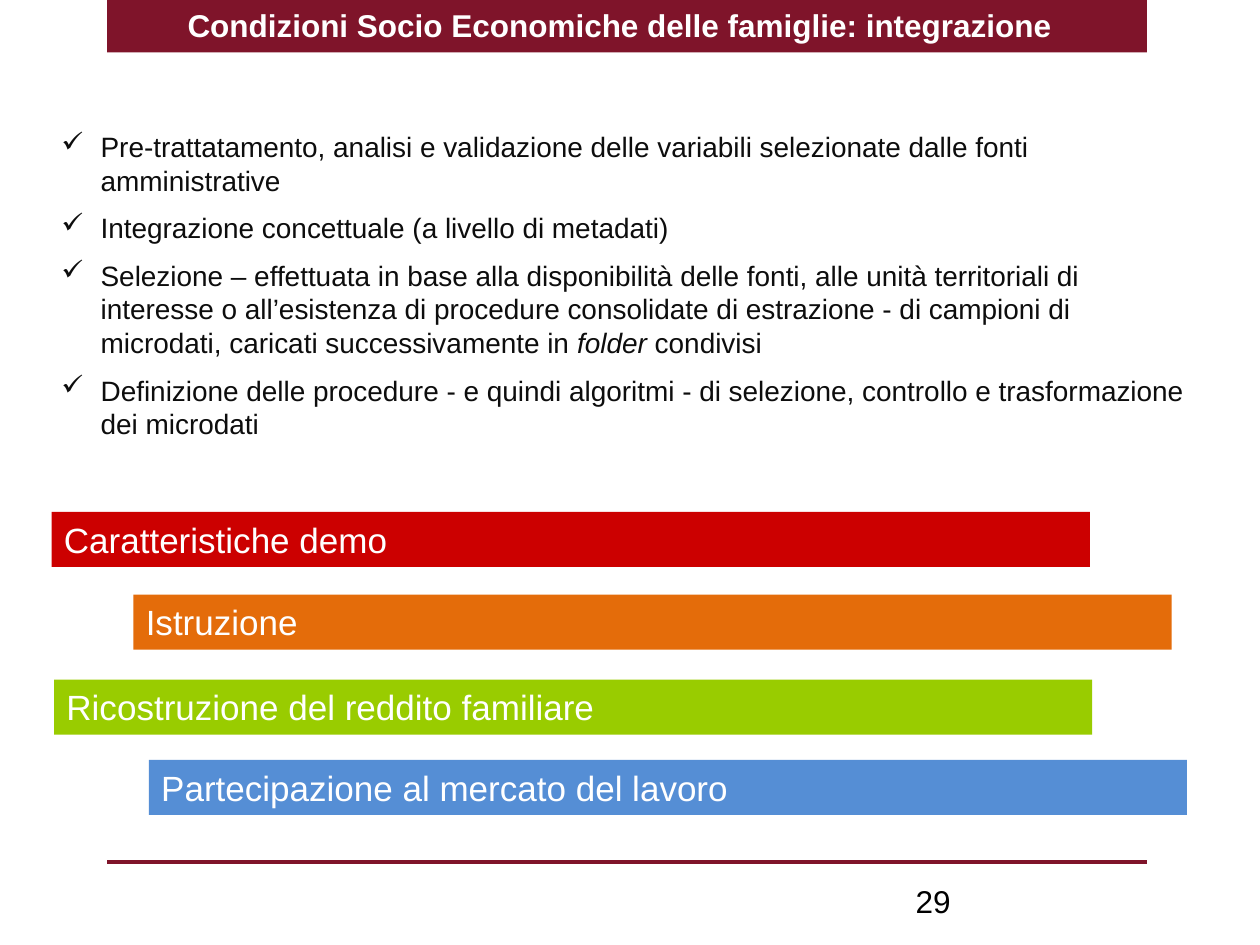
from lxml import etree
from pptx import Presentation
from pptx import util as u
from pptx.dml.color import RGBColor
from pptx.enum import shapes, text
from pptx.oxml.ns import qn

FONT = "Arial"
COLORS = {
    "maroon": "7F142A", "red": "CC0000", "orange": "E46C0A", "green": "99CC00",
    "blue": "558ED5", "white": "FFFFFF", "ink": "0D0D0D", "black": "000000",
}
TITLE = "Condizioni Socio Economiche delle famiglie: integrazione"
STEPS = [
    ["Pre-trattatamento, analisi e validazione delle variabili selezionate dalle fonti amministrative"],
    ["Integrazione concettuale (a livello di metadati)"],
    ["Selezione – effettuata in base alla disponibilità delle fonti, alle unità territoriali di "
     "interesse o all’esistenza di procedure consolidate di estrazione - di campioni di microdati, "
     "caricati successivamente in ", "folder", " condivisi"],
    ["Definizione delle procedure - e quindi algoritmi - di selezione, controllo e trasformazione dei microdati"],
]
TOPICS = [
    ("Caratteristiche demo", "red", 1.04, 10.32),
    ("Istruzione", "orange", 2.69, 11.99),
    ("Ricostruzione del reddito familiare", "green", 1.09, 13.7),
    ("Partecipazione al mercato del lavoro", "blue", 3, 15.32),
]
PAGE_NUMBER = "29"
BAND_LEFT, BAND_WIDTH, RULE_TOP = 2.16, 20.96, 17.38
TOPIC_WIDTH, TOPIC_HEIGHT = 20.93, 1.11
BULLET_INDENT = u.Cm(0.79)


def color(name):
    return RGBColor.from_string(COLORS[name])


def style(font, size, name, bold=False):
    font.name, font.size, font.bold = FONT, u.Pt(size), bold
    font.color.rgb = color(name)


def add_bar(slide, left, top, width, height, fill):
    bar = slide.shapes.add_shape(
        shapes.MSO_SHAPE.RECTANGLE, u.Cm(left), u.Cm(top), u.Cm(width), u.Cm(height))
    bar.shadow.inherit = False
    bar.fill.solid()
    bar.fill.fore_color.rgb = color(fill)
    bar.line.fill.background()
    return bar


def add_text(slide, left, top, width, height):
    box = slide.shapes.add_textbox(u.Cm(left), u.Cm(top), u.Cm(width), u.Cm(height))
    box.text_frame.word_wrap = True
    return box.text_frame


def add_rule(slide):
    rule = slide.shapes.add_connector(
        shapes.MSO_CONNECTOR.STRAIGHT, u.Cm(BAND_LEFT), u.Cm(RULE_TOP),
        u.Cm(BAND_LEFT + BAND_WIDTH), u.Cm(RULE_TOP))
    rule.line.color.rgb = color("maroon")
    rule.line.width = u.Pt(2)
    etree.SubElement(rule._element.spPr, qn("a:effectLst"))


def add_topic(slide, label, fill, left, top):
    frame = add_bar(slide, left, top, TOPIC_WIDTH, TOPIC_HEIGHT, fill).text_frame
    frame.text = label
    frame.vertical_anchor = text.MSO_ANCHOR.TOP
    paragraph = frame.paragraphs[0]
    paragraph.alignment = text.PP_ALIGN.LEFT
    style(paragraph.runs[0].font, 20, "white")


def add_steps(slide):
    frame = add_text(slide, 0.99, 2.49, 23.42, 6.76)
    for index, parts in enumerate(STEPS):
        paragraph = frame.add_paragraph() if index else frame.paragraphs[0]
        properties = paragraph._p.get_or_add_pPr()
        properties.set("marL", str(BULLET_INDENT))
        properties.set("indent", str(-BULLET_INDENT))
        etree.SubElement(properties, qn("a:buChar"), char="✓")
        if index:
            paragraph.space_before = u.Pt(8)
        for part in parts:
            run = paragraph.add_run()
            run.text = part
            style(run.font, 16, "ink")
            run.font.italic = part == "folder"


def main():
    presentation = Presentation()
    presentation.slide_width, presentation.slide_height = u.Cm(25.4), u.Cm(19.05)
    slide = presentation.slides.add_slide(presentation.slide_layouts[6])

    add_bar(slide, BAND_LEFT, 0, BAND_WIDTH, 1.06, "maroon")
    add_rule(slide)
    for topic in TOPICS:
        add_topic(slide, *topic)
    add_steps(slide)

    title = add_text(slide, 1.98, 0, 21.03, 1.11)
    title.text = TITLE
    title.paragraphs[0].alignment = text.PP_ALIGN.CENTER
    style(title.paragraphs[0].runs[0].font, 18, "white", bold=True)

    number = add_text(slide, 18.21, 17.65, 5.92, 1.02)
    number.text = PAGE_NUMBER
    style(number.paragraphs[0].runs[0].font, 18, "black")

    presentation.save("out.pptx")


if __name__ == "__main__":
    main()
